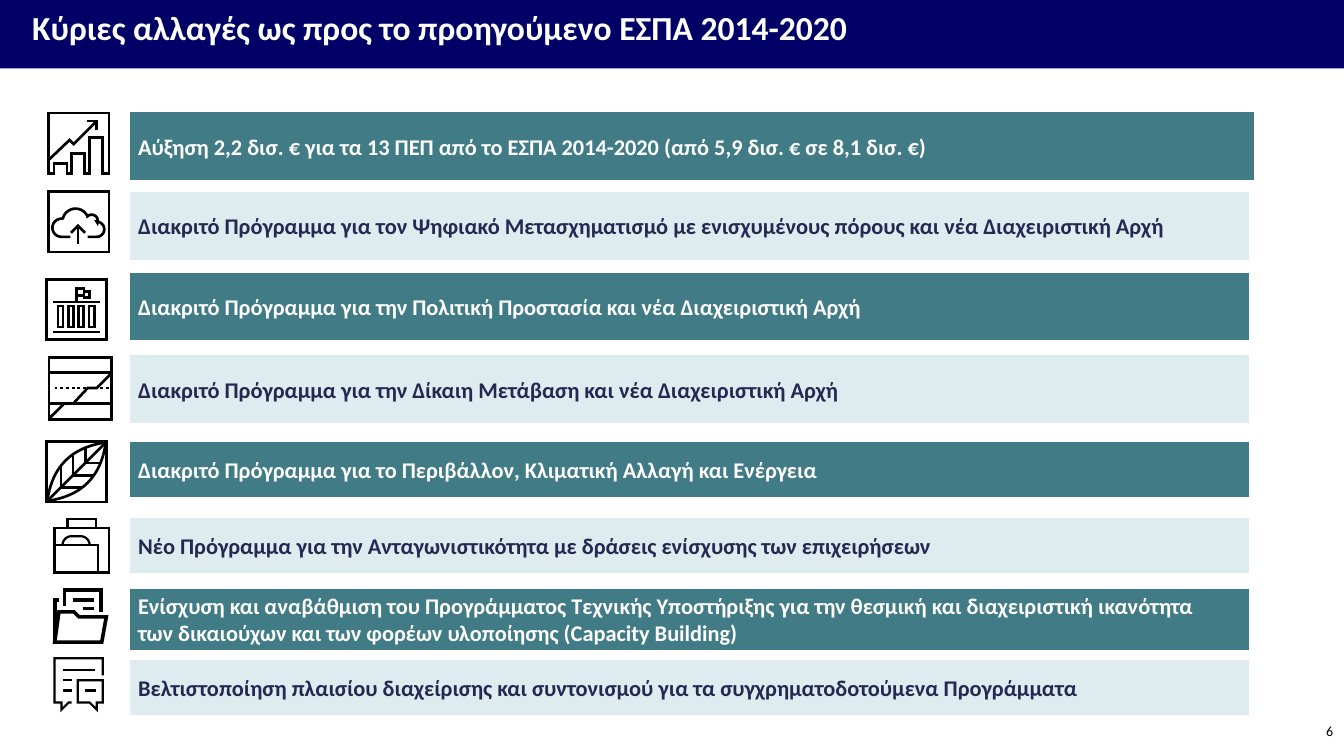
import math
from dataclasses import dataclass

import pptx
import pptx.dml.color
import pptx.enum.shapes
import pptx.enum.text
import pptx.util
from lxml import etree
from pptx.util import Inches


@dataclass(frozen=True)
class Theme:
    font: str = "Calibri"
    navy: str = "000066"
    teal: str = "417B85"
    pale: str = "DEECEF"
    ink: str = "242852"
    white: str = "FFFFFF"
    black: str = "000000"
    title_size: int = 24
    body_size: int = 16
    number_size: int = 10
    edge: float = 0.75


T = Theme()
BAR_LEFT, BAR_WIDTH = 1.28, 11.11

# Text, top, height and width of each bar
BARS = [
    ("Αύξηση 2,2 δισ. € για τα 13 ΠΕΠ από το ΕΣΠΑ 2014-2020 (από 5,9 δισ. € σε 8,1 δισ. €)",
     1.11, 0.68, 11.16),
    ("Διακριτό Πρόγραμμα για τον Ψηφιακό Μετασχηματισμό με ενισχυμένους πόρους "
     "και νέα Διαχειριστική Αρχή", 1.9, 0.68, BAR_WIDTH),
    ("Διακριτό Πρόγραμμα για την Πολιτική Προστασία και νέα Διαχειριστική Αρχή",
     2.7, 0.68, BAR_WIDTH),
    ("Διακριτό Πρόγραμμα για την Δίκαιη Μετάβαση και νέα Διαχειριστική Αρχή",
     3.52, 0.68, BAR_WIDTH),
    ("Διακριτό Πρόγραμμα για το Περιβάλλον, Κλιματική Αλλαγή και Ενέργεια",
     4.38, 0.56, BAR_WIDTH),
    ("Νέο Πρόγραμμα για την Ανταγωνιστικότητα με δράσεις ενίσχυσης των επιχειρήσεων",
     5.13, 0.56, BAR_WIDTH),
    ("Ενίσχυση και αναβάθμιση του Προγράμματος Τεχνικής Υποστήριξης για την θεσμική και "
     "διαχειριστική ικανότητα των δικαιούχων και των φορέων υλοποίησης (Capacity Building)",
     5.84, 0.61, BAR_WIDTH),
    ("Βελτιστοποίηση πλαισίου διαχείρισης και συντονισμού για τα συγχρηματοδοτούμενα "
     "Προγράμματα", 6.54, 0.56, BAR_WIDTH),
]


def rgb(value):
    return pptx.dml.color.RGBColor.from_string(value)


# Stroke helpers: points in hundredths of an inch from the icon's corner
def box(x0, y0, x1, y1):
    return [(x0, y0), (x1, y0), (x1, y1), (x0, y1), (x0, y0)]


def arc(cx, cy, radius, start, end, steps=12):
    angles = [math.radians(start + (end - start) * i / steps) for i in range(steps + 1)]
    return [(cx + radius * math.cos(a), cy + radius * math.sin(a)) for a in angles]


def curve(start, control, end, steps=20):
    points = []
    for i in range(steps + 1):
        t = i / steps
        points.append(tuple((1 - t) ** 2 * a + 2 * t * (1 - t) * b + t * t * c
                            for a, b, c in zip(start, control, end)))
    return points


def icons():
    """Left, top, line width and strokes of each icon."""
    frame = box(1, 1, 61, 61)
    growth = [
        [(1, 1), (1, 61), (6.5, 61), (6.5, 51.5), (19.5, 51.5), (19.5, 61), (24, 61),
         (24, 41), (37, 41), (37, 61), (42, 61), (42, 25.5), (54.5, 25.5), (54.5, 61),
         (61, 61), (61, 1), (1, 1)],
        [(1, 48), (22, 28), (26, 32), (49, 9)],
        [(39, 9), (49, 9), (49, 18)],
    ]
    cloud = [
        frame,
        [(23, 46)] + arc(14, 37, 9, 90, 270) + arc(28, 31, 13, 195, 330)
        + arc(44, 30, 6, 225, 380) + arc(49, 38.5, 7.5, 270, 450) + [(40, 46)],
        [(30.5, 53), (30.5, 35)],
        [(23.5, 42), (30.5, 35), (37.5, 42)],
    ]
    pillars = [box(12.5 + 10.33 * i, 27.5, 17.5 + 10.33 * i, 48.5) for i in range(4)]
    building = [
        frame, *pillars,
        [(8, 23.5), (54, 23.5)], [(8, 53.5), (54, 53.5)],
        box(31, 10.5, 38.5, 17), box(38.5, 13.5, 44, 19.5), [(31, 17), (31, 23.5)],
    ]
    dashes = [[(7.2 + 5.67 * i, 32), (10 + 5.67 * i, 32)] for i in (0, 1, 2, 3, 4, 5, 8, 9)]
    transition = [
        box(1.5, 1.5, 63.5, 63), *dashes,
        [(1.5, 16.5), (63.5, 16.5)], [(1.5, 47.5), (63.5, 47.5)],
        [(2, 62), (16, 48)], [(26, 47), (40, 32), (49, 32), (63, 18)],
    ]
    stem, tip = (2, 60), (60, 2)
    veins = [[(15.5, 24.5), (15.5, 47), (36, 47)], [(27.5, 14.5), (27.5, 35), (48, 35)],
             [(40, 7), (40, 22.5), (54, 22.5)]]
    leaf = [frame, curve(stem, (9, 9), tip), curve(stem, (53, 53), tip), [stem, tip], *veins]
    briefcase = [
        box(1, 10, 55, 54),
        [(14, 10), (14, 1), (42, 1), (42, 10)],
        [(1, 27), (44, 27), (44, 54)],
        arc(18, 27, 9, 180, 270) + arc(27, 27, 9, 270, 360),
    ]
    folder = [
        [(11, 17), (11, 1.3), (47.5, 1.3), (47.5, 23)],
        [(6, 11), (1.3, 11), (1.3, 53)],
        [(1.3, 53), (5.5, 23), (20.5, 23), (25.5, 28), (52.5, 28), (48, 53), (1.3, 53)],
        [(19, 11.5), (40, 11.5)], [(29, 19.5), (40, 19.5)],
    ]
    dialogue = [
        [(49, 18), (49, 1), (1, 1), (1, 45), (8, 45), (8, 52), (15, 45), (18, 45)],
        [(24, 23), (49, 23), (49, 45), (43, 45), (43, 52), (36, 45), (24, 45), (24, 23)],
        [(9, 13), (41, 13)], [(9, 23), (18, 23)], [(9, 33), (18, 33)], [(31, 33), (42, 33)],
    ]
    return [
        (0.47, 1.11, 1.9, growth), (0.47, 1.89, 1.9, cloud), (0.45, 2.76, 1.9, building),
        (0.47, 3.53, 1.9, transition), (0.45, 4.37, 1.9, leaf), (0.53, 5.14, 1.6, briefcase),
        (0.53, 5.84, 2.6, folder), (0.53, 6.52, 1.6, dialogue),
    ]


def write(sp, text, size, color, bold, margins):
    tf = sp.text_frame
    tf.word_wrap = True
    tf.vertical_anchor = pptx.enum.text.MSO_ANCHOR.MIDDLE
    tf.margin_left, tf.margin_top, tf.margin_right, tf.margin_bottom = map(Inches, margins)
    tf.text = text
    p = tf.paragraphs[0]
    p.alignment = pptx.enum.text.PP_ALIGN.LEFT
    r = p.runs[0]
    r.font.name, r.font.size, r.font.bold = T.font, pptx.util.Pt(size), bold
    r.font.color.rgb = rgb(color)
    return p


def add_bar(s, left, top, width, height, fill):
    sp = s.shapes.add_shape(pptx.enum.shapes.MSO_SHAPE.RECTANGLE,
                            Inches(left), Inches(top), Inches(width), Inches(height))
    sp.shadow.inherit = False
    sp.fill.solid()
    sp.fill.fore_color.rgb = rgb(fill)
    sp.line.fill.background()
    return sp


def add_icon(s, left, top, weight, strokes):
    builder = None
    for stroke in strokes:
        points = [(Inches(left + x / 100), Inches(top + y / 100)) for x, y in stroke]
        if builder is None:
            builder = s.shapes.build_freeform(*points[0])
        else:
            builder.move_to(*points[0])
        builder.add_line_segments(points[1:], close=stroke[0] == stroke[-1])
    sp = builder.convert_to_shape()
    sp.shadow.inherit = False
    sp.fill.background()
    sp.line.color.rgb = rgb(T.black)
    sp.line.width = pptx.util.Pt(weight)
    ln = sp._element.spPr.find(pptx.oxml.ns.qn("a:ln"))
    etree.SubElement(ln, pptx.oxml.ns.qn("a:miter"), lim="800000")


def main():
    prs = pptx.Presentation()
    prs.slide_width, prs.slide_height = Inches(13.33), Inches(7.5)
    s = prs.slides.add_slide(prs.slide_layouts[6])

    # Title band
    sp = add_bar(s, 0, -0.09, 13.33, 0.77, T.navy)
    p = write(sp, "Κύριες αλλαγές ως προς το προηγούμενο ΕΣΠΑ 2014-2020",
              T.title_size, T.white, True, (0.32, 0.1, 0.1, 0.1))
    p.line_spacing = 0.9

    # Bars in alternating colours
    for i, (text, top, height, width) in enumerate(BARS):
        fill, color = ((T.teal, T.white), (T.pale, T.ink))[i % 2]
        sp = add_bar(s, BAR_LEFT, top, width, height, fill)
        sp.line.color.rgb = rgb(T.white)
        sp.line.width = pptx.util.Pt(T.edge)
        write(sp, text, T.body_size, color, True, (0.09, 0.09, 0.26, 0.09))

    # Icons
    for icon in icons():
        add_icon(s, *icon)

    # Slide number
    sp = s.shapes.add_textbox(Inches(12.52), Inches(6.97), Inches(0.8), Inches(0.57))
    p = write(sp, "6", T.number_size, T.black, False, (0.1, 0.1, 0.1, 0.1))
    p.alignment = pptx.enum.text.PP_ALIGN.RIGHT

    prs.save("out.pptx")


if __name__ == "__main__":
    main()
